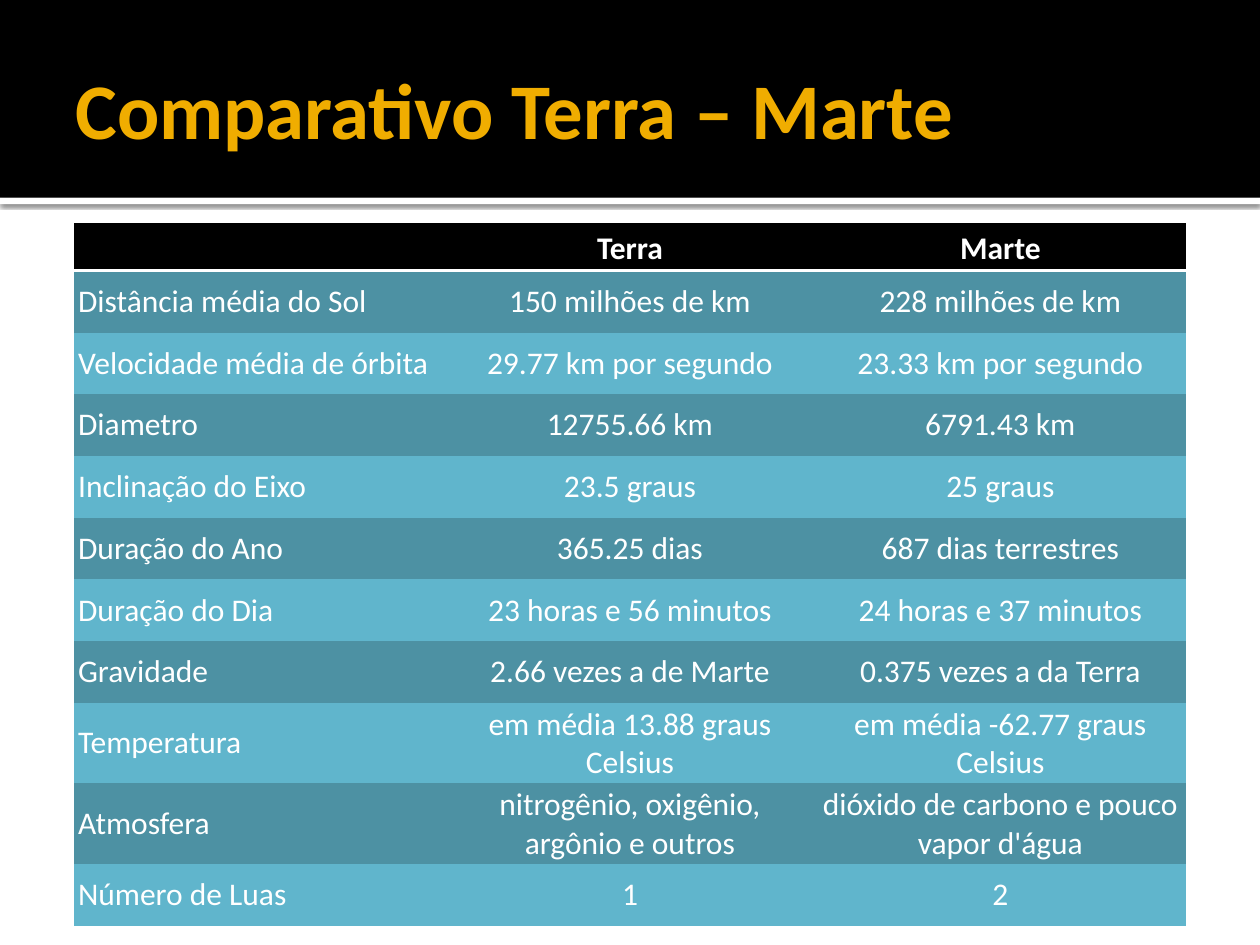
from lxml import etree
from pptx import Presentation
from pptx import util as u
from pptx.dml.color import RGBColor
from pptx.enum import shapes, text
from pptx.oxml import parse_xml
from pptx.oxml.ns import nsdecls, qn

TITLE = "Comparativo Terra – Marte"
HEADER = ("", "Terra", "Marte")
FACTS = [
    ("Distância média do Sol", "150 milhões de km", "228 milhões de km"),
    ("Velocidade média de órbita", "29.77 km por segundo", "23.33 km por segundo"),
    ("Diametro", "12755.66 km", "6791.43 km"),
    ("Inclinação do Eixo", "23.5 graus", "25 graus"),
    ("Duração do Ano", "365.25 dias", "687 dias terrestres"),
    ("Duração do Dia", "23 horas e 56 minutos", "24 horas e 37 minutos"),
    ("Gravidade", "2.66 vezes a de Marte", "0.375 vezes a da Terra"),
    ("Temperatura", "em média 13.88 graus Celsius", "em média -62.77 graus Celsius"),
    ("Atmosfera", "nitrogênio, oxigênio, argônio e outros",
     "dióxido de carbono e pouco vapor d'água"),
    ("Número de Luas", "1", "2"),
]
TWO_LINE_FACTS = ("Temperatura", "Atmosfera")

FONT = "Calibri"
BLACK = RGBColor(0, 0, 0)
WHITE = RGBColor(255, 255, 255)
GOLD = RGBColor(0xF0, 0xAD, 0x00)
BANDS = (RGBColor(0x4D, 0x91, 0xA3), RGBColor(0x60, 0xB5, 0xCC))

WIDTH, HEIGHT = 10, 7.5
BANNER_HEIGHT, STRIPE_HEIGHT = 1.57, 0.05
TABLE_LEFT, TABLE_TOP = 0.59, 1.77
HEADER_HEIGHT, FACT_HEIGHT, TWO_LINE_HEIGHT = 0.38, 0.49, 0.57
NO_STYLE = "{2D5ABB26-0587-4C30-8999-92F81FD0307C}"


def add_band(slide, top, height, color):
    band = slide.shapes.add_shape(
        shapes.MSO_SHAPE.RECTANGLE, 0, u.Inches(top), u.Inches(WIDTH), u.Inches(height))
    band.shadow.inherit = False
    band.fill.solid()
    band.fill.fore_color.rgb = color
    band.line.fill.background()
    return band


def cast_shadow(band):
    effects = band.element.spPr.find(qn("a:effectLst"))
    effects.append(parse_xml(
        f'<a:outerShdw {nsdecls("a")} blurRad="{u.Pt(2.5)}" dist="{u.Pt(0.8)}" '
        'dir="5400000" algn="tl" rotWithShape="0">'
        '<a:srgbClr val="000000"><a:alpha val="60000"/></a:srgbClr></a:outerShdw>'))


def set_font(paragraph, size, color, bold):
    font = paragraph.font
    font.name, font.size, font.bold = FONT, u.Pt(size), bold
    font.color.rgb = color


def add_title(slide):
    title = slide.shapes.add_textbox(
        u.Inches(0.5), u.Inches(0.17), u.Inches(9), u.Inches(1.37))
    frame = title.text_frame
    frame.word_wrap = True
    frame.vertical_anchor = text.MSO_ANCHOR.MIDDLE
    frame.margin_left = u.Inches(0.1)
    frame.margin_right = frame.margin_top = frame.margin_bottom = u.Inches(0.05)
    frame.text = TITLE
    set_font(frame.paragraphs[0], 45, GOLD, True)


def underline(cell):
    border = parse_xml(
        f'<a:lnB {nsdecls("a")} w="{u.Pt(2)}"><a:solidFill>'
        f'<a:srgbClr val="{WHITE}"/></a:solidFill></a:lnB>')
    cell.fill.solid()
    cell.fill.fore_color.rgb = BLACK
    cell._tc.get_or_add_tcPr().insert(0, border)


def fill_cell(cell, content, row, column):
    is_header = row == 0
    cell.margin_left = cell.margin_right = u.Inches(0.03)
    cell.margin_top = cell.margin_bottom = u.Inches(0.02)
    cell.vertical_anchor = text.MSO_ANCHOR.BOTTOM if is_header else text.MSO_ANCHOR.MIDDLE
    cell.text = content
    paragraph = cell.text_frame.paragraphs[0]
    paragraph.alignment = text.PP_ALIGN.CENTER if column else text.PP_ALIGN.LEFT
    set_font(paragraph, 18, WHITE, is_header)
    if is_header:
        underline(cell)
    else:
        cell.fill.solid()
        cell.fill.fore_color.rgb = BANDS[(row - 1) % len(BANDS)]


def add_comparison(slide):
    rows = [HEADER, *FACTS]
    heights = [HEADER_HEIGHT] + [
        TWO_LINE_HEIGHT if fact[0] in TWO_LINE_FACTS else FACT_HEIGHT for fact in FACTS]
    frame = slide.shapes.add_table(
        len(rows), len(HEADER), u.Inches(TABLE_LEFT), u.Inches(TABLE_TOP),
        u.Inches(WIDTH - 2 * TABLE_LEFT), u.Inches(sum(heights)))
    for style in frame.element.iter(qn("a:tableStyleId")):
        style.text = NO_STYLE
    comparison = frame.table
    for row, (contents, height) in enumerate(zip(rows, heights)):
        comparison.rows[row].height = u.Inches(height)
        for column, content in enumerate(contents):
            fill_cell(comparison.cell(row, column), content, row, column)


def main():
    deck = Presentation()
    deck.slide_width, deck.slide_height = u.Inches(WIDTH), u.Inches(HEIGHT)
    slide = deck.slides.add_slide(deck.slide_layouts[6])
    slide.background.fill.solid()
    slide.background.fill.fore_color.rgb = WHITE
    cast_shadow(add_band(slide, BANNER_HEIGHT, STRIPE_HEIGHT, WHITE))
    add_band(slide, 0, BANNER_HEIGHT, BLACK)
    add_title(slide)
    add_comparison(slide)
    deck.save("out.pptx")


if __name__ == "__main__":
    main()
